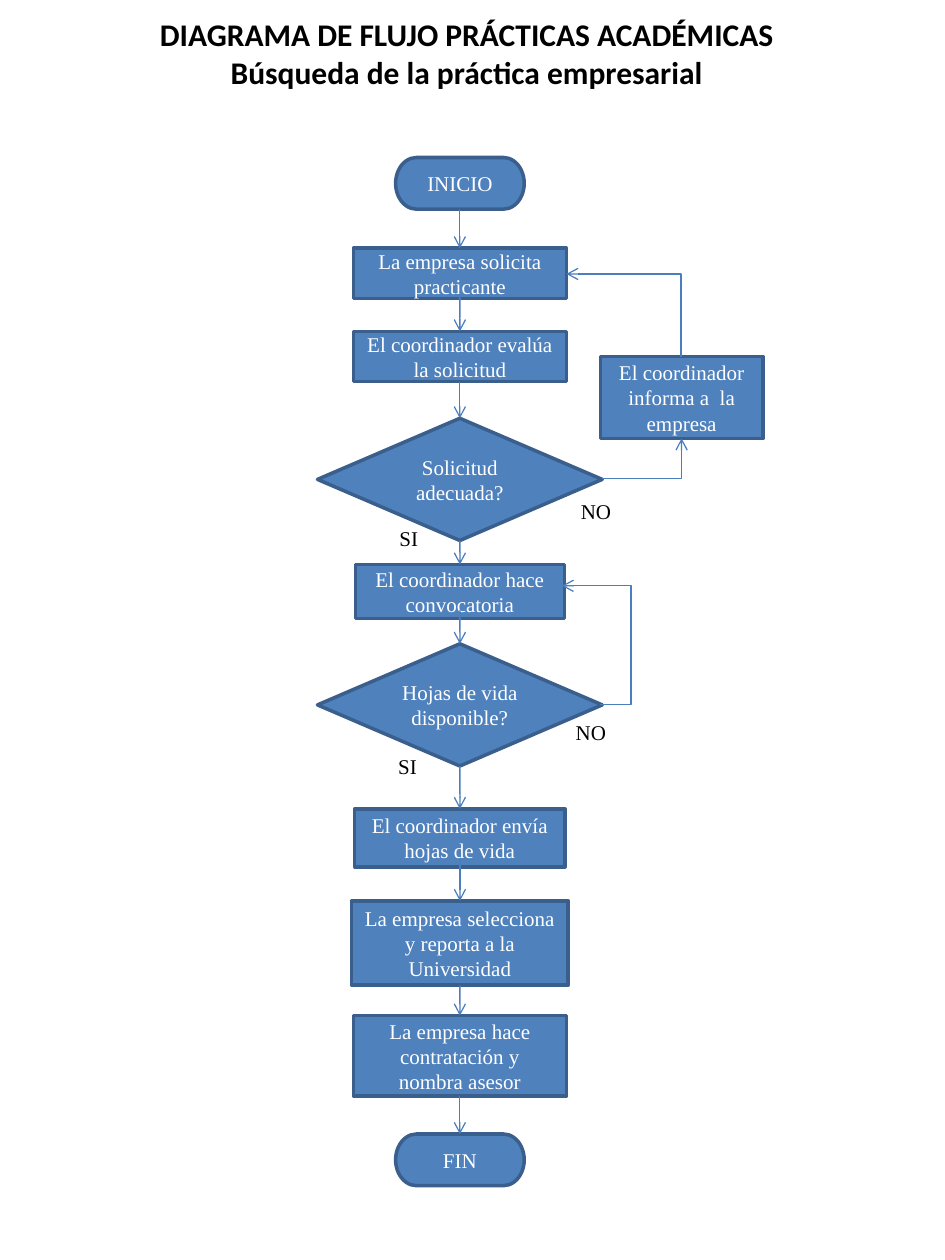
from lxml import etree
from pptx import Presentation
from pptx.dml.color import RGBColor
from pptx.enum import shapes, text
from pptx.oxml.ns import qn
from pptx.util import Inches, Pt

COLORS = {"fill": "4F81BD", "border": "3A5F8C", "arrow": "4B7EBC",
          "light": "FFFFFF", "dark": "000000"}
AXIS = 3.65  # centre line of the main flow

presentation = Presentation()
presentation.slide_width = Inches(7.5)
presentation.slide_height = Inches(10)
slide = presentation.slides.add_slide(presentation.slide_layouts[5])


def write(shape, words, color, size=12, font="Times New Roman", bold=False):
    frame = shape.text_frame
    frame.text = words
    frame.word_wrap = True
    frame.vertical_anchor = text.MSO_ANCHOR.MIDDLE
    for paragraph in frame.paragraphs:
        paragraph.alignment = text.PP_ALIGN.CENTER
        for run in paragraph.runs:
            run.font.size = Pt(size)
            run.font.name = font
            run.font.bold = bold
            run.font.color.rgb = RGBColor.from_string(COLORS[color])


def add_arrow(kind, x1, y1, x2, y2):
    arrow = slide.shapes.add_connector(
        kind, Inches(x1), Inches(y1), Inches(x2), Inches(y2))
    arrow.line.color.rgb = RGBColor.from_string(COLORS["arrow"])
    arrow.line.width = Pt(0.75)
    properties = arrow._element.spPr
    etree.SubElement(properties.find(qn("a:ln")), qn("a:tailEnd"), type="arrow")
    etree.SubElement(properties, qn("a:effectLst"))
    return arrow


# Title
title = slide.shapes.title
title.left, title.top = Inches(0.29), Inches(0.07)
title.width, title.height = Inches(6.83), Inches(0.71)
write(title, "DIAGRAMA DE FLUJO PRÁCTICAS ACADÉMICAS\n"
             "Búsqueda de la práctica empresarial", "dark", 18, "Calibri", True)
title.text_frame.vertical_anchor = text.MSO_ANCHOR.TOP
title.text_frame.auto_size = text.MSO_AUTO_SIZE.SHAPE_TO_FIT_TEXT

# Steps: preset, centre x, top, width, height, words
TERMINATOR = shapes.MSO_SHAPE.FLOWCHART_TERMINATOR
PROCESS = shapes.MSO_SHAPE.RECTANGLE
DECISION = shapes.MSO_SHAPE.DIAMOND
steps = [
    (TERMINATOR, AXIS, 1.25, 1.02, 0.41, "INICIO"),
    (PROCESS, AXIS, 1.97, 1.69, 0.4, "La empresa solicita practicante"),
    (PROCESS, AXIS, 2.63, 1.69, 0.4, "El coordinador evalúa la solicitud"),
    (DECISION, AXIS, 3.32, 2.26, 0.97, "Solicitud adecuada?"),
    (PROCESS, AXIS, 4.48, 1.66, 0.43, "El coordinador hace convocatoria"),
    (DECISION, AXIS, 5.11, 2.26, 0.97, "Hojas de vida disponible?"),
    (PROCESS, AXIS, 6.42, 1.67, 0.46, "El coordinador envía hojas de vida"),
    (PROCESS, AXIS, 7.15, 1.72, 0.67,
     "La empresa selecciona y reporta a la Universidad"),
    (PROCESS, AXIS, 8.06, 1.69, 0.64,
     "La empresa hace contratación y nombra asesor"),
    (TERMINATOR, AXIS, 9, 1.02, 0.41, "FIN"),
    (PROCESS, 5.41, 2.83, 1.29, 0.65, "El coordinador informa a  la empresa"),
]
boxes = []
for preset, center, top, width, height, words in steps:
    box = slide.shapes.add_shape(preset, Inches(center - width / 2), Inches(top),
                                 Inches(width), Inches(height))
    box.shadow.inherit = False
    box.fill.solid()
    box.fill.fore_color.rgb = RGBColor.from_string(COLORS["fill"])
    box.line.color.rgb = RGBColor.from_string(COLORS["border"])
    box.line.width = Pt(2)
    write(box, words, "light")
    boxes.append(box)

# Main flow: some arrows start a little inside their box
inside_starts = {1: 2.32, 4: 4.84, 6: 6.82}
main_flow = boxes[:-1]
for index, (upper, lower) in enumerate(zip(main_flow, main_flow[1:])):
    start = inside_starts.get(index, steps[index][2] + steps[index][4])
    arrow = add_arrow(shapes.MSO_CONNECTOR.STRAIGHT,
                      AXIS, start, AXIS, steps[index + 1][2])
    if index not in inside_starts:
        arrow.begin_connect(upper, 2)
    arrow.end_connect(lower, 0)

# Rejected request: one-corner arrows through the side box
ELBOW = shapes.MSO_CONNECTOR.ELBOW
to_side_box = add_arrow(ELBOW, 4.78, 3.8, 5.41, 3.48)
back_to_request = add_arrow(ELBOW, 4.62, 2.96, 5.28, 2.05)
back_to_request._element.spPr.find(qn("a:xfrm")).set("rot", str(270 * 60000))
for arrow in (to_side_box, back_to_request):
    arrow._element.spPr.find(qn("a:prstGeom")).set("prst", "bentConnector2")

# No résumés: the loop bulges out to the right of both ends
back_to_call = add_arrow(ELBOW, 4.76, 5.59, 4.46, 4.65)
geometry = back_to_call._element.spPr.find(qn("a:prstGeom"))
etree.SubElement(geometry.get_or_add_avLst(), qn("a:gd"),
                 name="adj1", fmla="val -83200")

# Answers beside the decisions
for words, left, top, width in [("SI", 3.03, 4.12, 0.43), ("NO", 4.5, 3.91, 0.46),
                                ("NO", 4.46, 5.66, 0.46), ("SI", 3.02, 5.93, 0.43)]:
    label = slide.shapes.add_textbox(Inches(left), Inches(top),
                                     Inches(width), Inches(0.3))
    write(label, words, "dark")

presentation.save("out.pptx")
